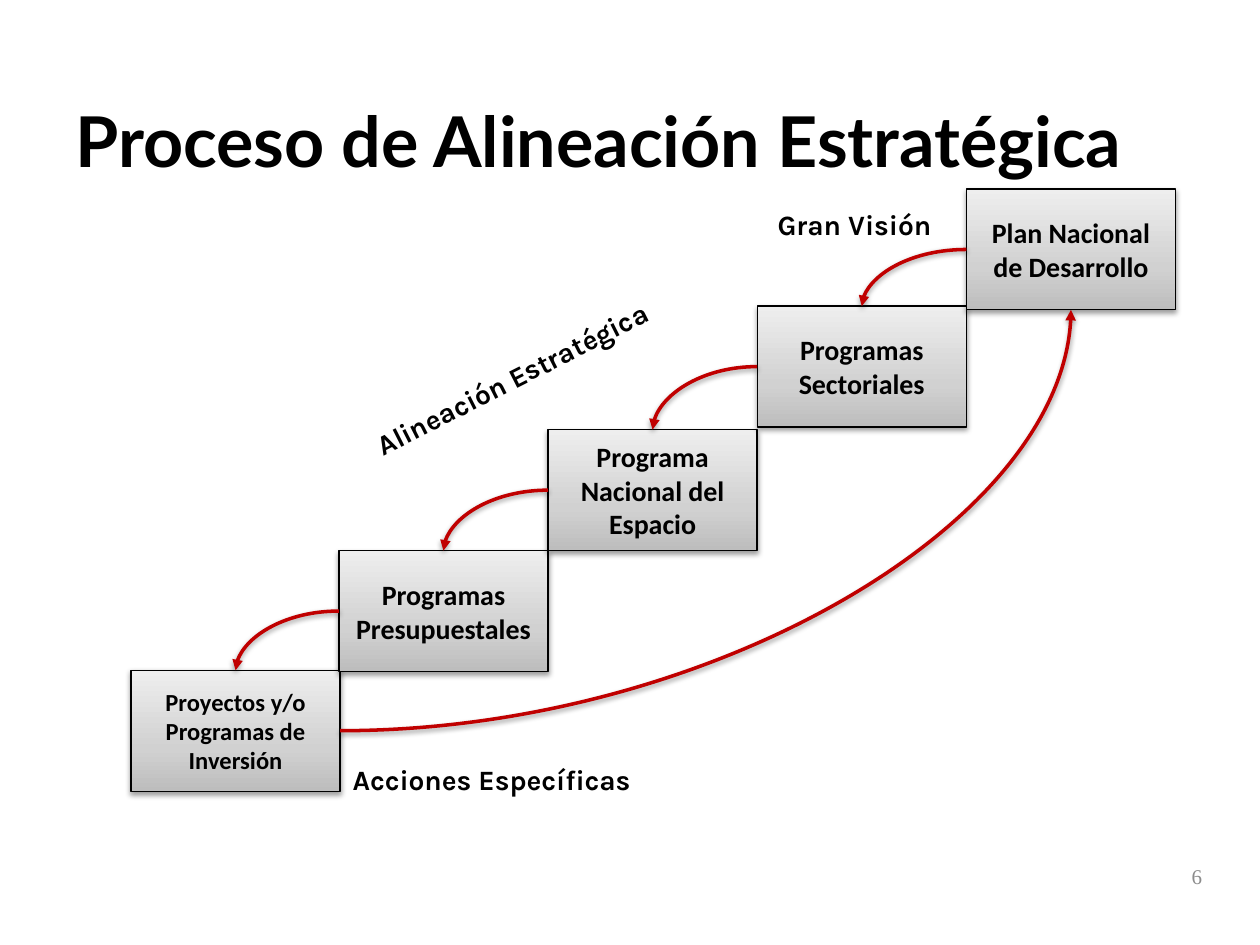
import dataclasses
import pptx
import pptx.dml.color
import pptx.enum.shapes
import pptx.enum.text
import pptx.oxml
import pptx.oxml.ns
import pptx.util

Inches = pptx.util.Inches
Pt = pptx.util.Pt
Align = pptx.enum.text.PP_ALIGN
Anchor = pptx.enum.text.MSO_ANCHOR
Shape = pptx.enum.shapes.MSO_SHAPE
Link = pptx.enum.shapes.MSO_CONNECTOR
NS = pptx.oxml.ns.nsdecls("a")


@dataclasses.dataclass(frozen=True)
class Theme:
    """Colours, fonts and type sizes of the slide."""
    ink: str = "000000"
    red: str = "C00000"
    grey: str = "8C8C8C"
    stops: tuple = ((0, "BDBDBD"), (35, "D1D1D1"), (100, "EEEEEE"))
    head: str = "Lato"
    body: str = "Calibri"
    note: str = "Karla"
    foot: str = "Times New Roman"
    big: int = 40
    mid: int = 16
    low: int = 14
    tiny: int = 12


THEME = Theme()
STEPS = (
    ("Proyectos y/o Programas de Inversión", 1.04, 5.32, THEME.low),
    ("Programas Presupuestales", 2.69, 4.37, THEME.mid),
    ("Programa Nacional del Espacio", 4.35, 3.41, THEME.mid),
    ("Programas Sectoriales", 6.01, 2.43, THEME.mid),
    ("Plan Nacional de Desarrollo", 7.67, 1.5, THEME.mid),
)
NOTES = (
    ("Acciones Específicas", (2.7, 6, 2.54, 0.37), Align.LEFT, 0),
    ("Gran Visión", (4.95, 1.6, 2.54, 0.37), Align.RIGHT, 0),
    ("Alineación Estratégica", (2.58, 2.82, 2.97, 0.37), Align.CENTER, 333.1),
)


def tone(code):
    """Return the colour for a hex code."""
    return pptx.dml.color.RGBColor.from_string(code)


def write(shape, text, font, size, align, color=THEME.ink, bold=True,
          anchor=Anchor.MIDDLE):
    """Set and format the text of a shape."""
    frame = shape.text_frame
    frame.text = text
    frame.word_wrap = True
    frame.vertical_anchor = anchor
    para = frame.paragraphs[0]
    para.alignment = align
    face = para.runs[0].font
    face.name, face.size, face.bold = font, Pt(size), bold
    face.color.rgb = tone(color)


def label(slide, box, text, font, size, align, **style):
    """Add a text box in the given box."""
    shape = slide.shapes.add_textbox(*map(Inches, box))
    write(shape, text, font, size, align, **style)
    return shape


def shade(shape):
    """Give a shape or connector a soft shadow below it."""
    shape._element.spPr.append(pptx.oxml.parse_xml(
        f'<a:effectLst {NS}><a:outerShdw blurRad="40000" dist="20000" '
        f'dir="5400000" rotWithShape="0"><a:srgbClr val="{THEME.ink}">'
        '<a:alpha val="38000"/></a:srgbClr></a:outerShdw></a:effectLst>'))


def blend(shape):
    """Fill a shape with the grey gradient."""
    stops = "".join(
        f'<a:gs pos="{pos * 1000}"><a:srgbClr val="{code}"/></a:gs>'
        for pos, code in THEME.stops)
    shape._element.spPr.insert(2, pptx.oxml.parse_xml(
        f'<a:gradFill {NS} rotWithShape="1"><a:gsLst>{stops}</a:gsLst>'
        '<a:lin ang="16200000" scaled="0"/></a:gradFill>'))


def block(slide, box, text, size):
    """Add one step of the stair."""
    shape = slide.shapes.add_shape(Shape.RECTANGLE, *map(Inches, box))
    blend(shape)
    shape.line.color.rgb = tone(THEME.ink)
    shape.line.width = Pt(0.75)
    shade(shape)
    write(shape, text, THEME.body, size, Align.CENTER)
    return shape


def arrow(slide, start, side, goal, end):
    """Join two steps with a curved arrow."""
    link = slide.shapes.add_connector(Link.CURVE, 0, 0, 0, 0)
    link.begin_connect(start, side)
    link.end_connect(goal, end)
    link._element.spPr.prstGeom.set("prst", "curvedConnector2")
    link.line.color.rgb = tone(THEME.red)
    link.line.width = Pt(2)
    link.line._get_or_add_ln().append(
        pptx.oxml.parse_xml(f'<a:tailEnd {NS} type="triangle"/>'))
    shade(link)


def stair(slide, wide, high):
    """Draw the steps and the arrows between them."""
    steps = [block(slide, (left, top, wide, high), text, size)
             for text, left, top, size in STEPS]
    arrow(slide, steps[0], 3, steps[-1], 2)
    for low, top in zip(steps, steps[1:]):
        arrow(slide, top, 1, low, 0)


def notes(slide):
    """Place the captions around the stair."""
    for text, box, align, turn in NOTES:
        shape = label(slide, box, text, THEME.note, THEME.mid, align,
                      anchor=Anchor.TOP)
        shape.rotation = turn


def main():
    """Build and save the slide."""
    deck = pptx.Presentation()
    deck.slide_width, deck.slide_height = Inches(10), Inches(7.5)
    slide = deck.slides.add_slide(deck.slide_layouts[6])
    label(slide, (0.5, 0.48, 9, 1.25), "Proceso de Alineación Estratégica",
          THEME.head, THEME.big, Align.LEFT)
    stair(slide, 1.66, 0.96)
    notes(slide)
    label(slide, (7.31, 6.75, 2.33, 0.4), "6", THEME.foot, THEME.tiny,
          Align.RIGHT, color=THEME.grey, bold=False)
    deck.save("out.pptx")


if __name__ == "__main__":
    main()
